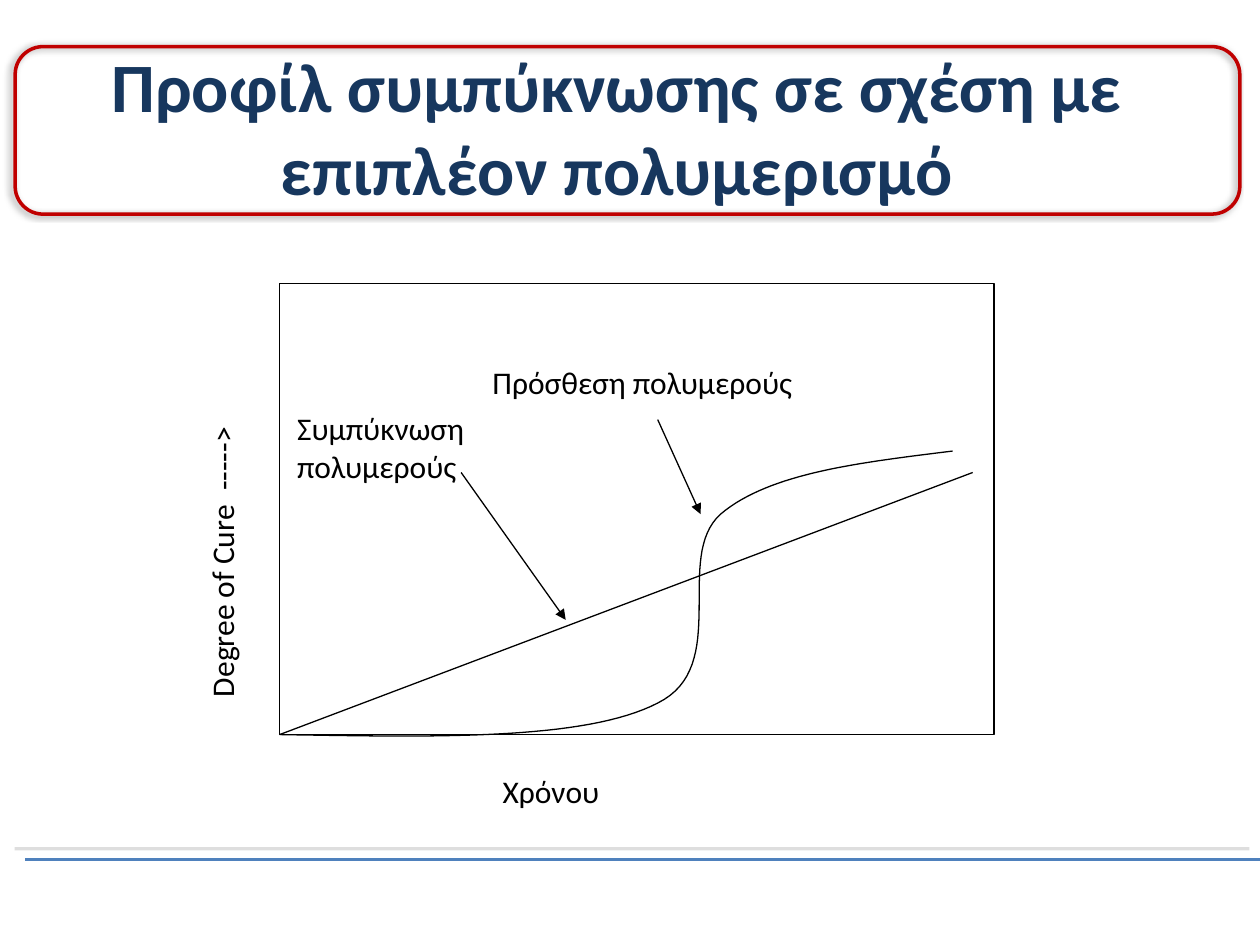
from lxml import etree
from pptx import Presentation
from pptx.dml.color import RGBColor
from pptx.enum.shapes import MSO_CONNECTOR, MSO_SHAPE
from pptx.enum.text import MSO_ANCHOR, PP_ALIGN
from pptx.oxml.ns import qn
from pptx.util import Inches, Pt

STRAIGHT = MSO_CONNECTOR.STRAIGHT
RECTANGLE, ROUNDED = MSO_SHAPE.RECTANGLE, MSO_SHAPE.ROUNDED_RECTANGLE
MIDDLE, TOP = MSO_ANCHOR.MIDDLE, MSO_ANCHOR.TOP
CENTER, LEFT = PP_ALIGN.CENTER, PP_ALIGN.LEFT

BLACK = RGBColor(0x00, 0x00, 0x00)
NAVY = RGBColor(0x17, 0x37, 0x5E)
RED = RGBColor(0xC0, 0x00, 0x00)
BLUE = RGBColor(0x4F, 0x81, 0xBD)
GRAY = RGBColor(0xBF, 0xBF, 0xBF)

TITLE_FORMAT = {"name": "Calibri", "size": Pt(39.6), "bold": True}
LABEL_FORMAT = {"name": "Calibri", "size": Pt(18), "bold": False}

LABELS = [
    ("Degree of Cure  ----->", (-0.06, 3.58, 3.67, 0.43), 270),
    ("Χρόνου", (3.89, 6.08, 4.42, 0.4), 0),
    ("Συμπύκνωση πολυμερούς", (2.26, 3.2, 2.5, 0.71), 0),
    ("Πρόσθεση πολυμερούς", (3.81, 2.83, 3.21, 0.4), 0),
]
ADDITION_CURVE = [
    [(2.22, 5.83), (3.43, 5.85), (4.64, 5.88), (5.22, 5.58)],
    [(5.22, 5.58), (5.81, 5.29), (5.34, 4.42), (5.72, 4.08)],
    [(5.72, 4.08), (6.11, 3.75), (6.84, 3.67), (7.56, 3.58)],
]
CURVE_STEPS = 32


def set_line(shape, color, width):
    """Give a shape or connector its line colour and width in points."""
    shape.line.color.rgb = color
    shape.line.width = Pt(width)


def set_shadow(shape, color=None, alpha=0, blur=0, distance=0, angle=0):
    """Replace the theme shadow with a given one, or with none."""
    effects = etree.SubElement(shape.element.spPr, qn("a:effectLst"))
    if color is not None:
        outer = etree.SubElement(
            effects, qn("a:outerShdw"), blurRad=str(Pt(blur)), dist=str(Pt(distance)),
            dir=str(angle * 60000), algn="ctr", rotWithShape="0")
        tint = etree.SubElement(outer, qn("a:srgbClr"), val=str(color))
        etree.SubElement(tint, qn("a:alpha"), val=str(alpha * 1000))


def add_frame(page, kind, place, color, width, shadow=()):
    """Add an unfilled outlined shape."""
    frame = page.shapes.add_shape(kind, *map(Inches, place))
    frame.fill.background()
    set_line(frame, color, width)
    set_shadow(frame, *shadow)


def add_line(page, start, end, color=BLACK, width=0.75, arrow=False, shadow=()):
    """Add a straight line, with an arrowhead at its end if asked."""
    line = page.shapes.add_connector(STRAIGHT, *map(Inches, start + end))
    set_line(line, color, width)
    if arrow:
        outline = line.element.spPr.find(qn("a:ln"))
        etree.SubElement(outline, qn("a:tailEnd"), type="triangle")
    set_shadow(line, *shadow)


def bezier_point(controls, t):
    """Return the point at t on a cubic curve, as lengths."""
    weights = ((1 - t) ** 3, 3 * t * (1 - t) ** 2, 3 * t ** 2 * (1 - t), t ** 3)
    return tuple(Inches(sum(w * c[axis] for w, c in zip(weights, controls)))
                 for axis in (0, 1))


def add_curve(page, segments):
    """Add an open smooth line through cubic segments."""
    points = [bezier_point(controls, step / CURVE_STEPS)
              for controls in segments for step in range(1, CURVE_STEPS + 1)]
    builder = page.shapes.build_freeform(*map(Inches, segments[0][0]))
    builder.add_line_segments(points, close=False)
    curve = builder.convert_to_shape()
    curve.fill.background()
    set_line(curve, BLACK, 0.75)
    set_shadow(curve)


def add_text(page, text, place, formats, color=BLACK, align=LEFT, anchor=TOP, rotation=0):
    """Add a wrapping text box with one paragraph."""
    box = page.shapes.add_textbox(*map(Inches, place))
    box.rotation = rotation
    box.text_frame.word_wrap = True
    box.text_frame.vertical_anchor = anchor
    para = box.text_frame.paragraphs[0]
    para.alignment = align
    span = para.add_run()
    span.text = text
    for name, value in formats.items():
        setattr(span.font, name, value)
    span.font.color.rgb = color


def main():
    """Build the slide and save it."""
    deck = Presentation()
    deck.slide_width, deck.slide_height = Inches(10), Inches(7.5)
    page = deck.slides.add_slide(deck.slide_layouts[6])

    add_line(page, (0.2, 6.82), (10, 6.82), BLUE, 1.75, shadow=(GRAY, 50, 0, 8.5, 225))
    add_text(page, "Προφίλ συμπύκνωσης σε σχέση με επιπλέον πολυμερισμό",
             (0.52, 0.29, 8.75, 1.42), TITLE_FORMAT, NAVY, CENTER, MIDDLE)
    add_frame(page, RECTANGLE, (2.22, 2.25, 5.67, 3.58), BLACK, 0.75)
    add_line(page, (2.22, 5.83), (7.72, 3.75))
    add_curve(page, ADDITION_CURVE)
    for text, place, rotation in LABELS:
        add_text(page, text, place, LABEL_FORMAT, rotation=rotation)
    add_line(page, (3.66, 3.75), (4.49, 4.92), arrow=True)
    add_line(page, (5.22, 3.33), (5.56, 4.08), arrow=True)
    add_frame(page, ROUNDED, (0.12, 0.37, 9.72, 1.33), RED, 2, (BLACK, 40, 4, 3, 180))

    deck.save("out.pptx")


if __name__ == "__main__":
    main()
